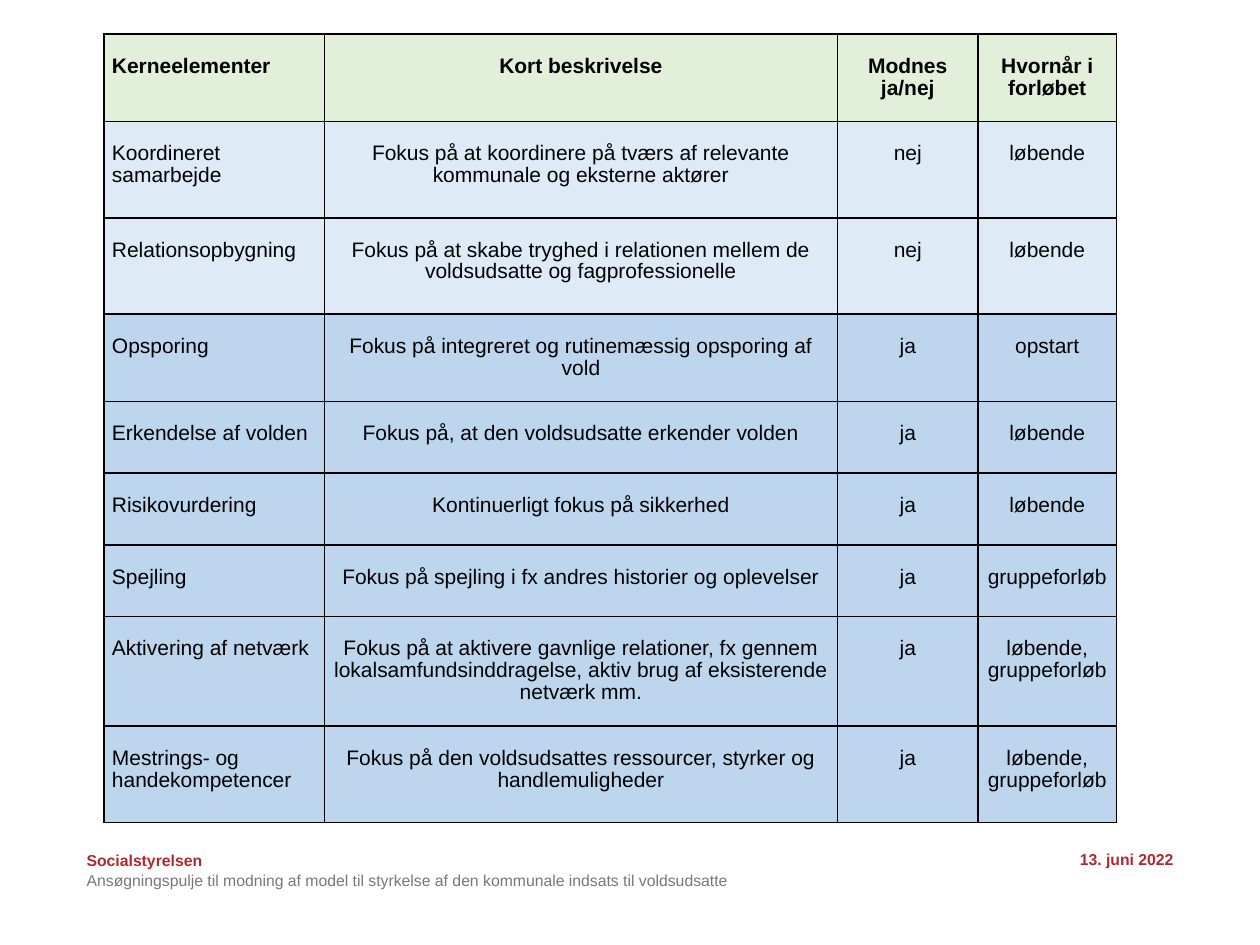
from lxml import etree
from pptx import Presentation
from pptx import util as u
from pptx.dml.color import RGBColor
from pptx.enum import text
from pptx.oxml import ns

COLORS = {"black": "000000", "red": "AF292E", "grey": "797777",
          "header": "E2EFD9", "nej": "DEEAF6", "ja": "BDD6EE"}
HEADER = ("Kerneelementer", "Kort beskrivelse", "Modnes ja/nej", "Hvornår i forløbet")
ELEMENTS = [
    ("Koordineret samarbejde",
     "Fokus på at koordinere på tværs af relevante kommunale og eksterne aktører",
     "nej", "løbende"),
    ("Relationsopbygning",
     "Fokus på at skabe tryghed i relationen mellem de voldsudsatte og fagprofessionelle",
     "nej", "løbende"),
    ("Opsporing", "Fokus på integreret og rutinemæssig opsporing af vold", "ja", "opstart"),
    ("Erkendelse af volden", "Fokus på, at den voldsudsatte erkender volden", "ja", "løbende"),
    ("Risikovurdering", "Kontinuerligt fokus på sikkerhed", "ja", "løbende"),
    ("Spejling", "Fokus på spejling i fx andres historier og oplevelser",
     "ja", "gruppeforløb"),
    ("Aktivering af netværk",
     "Fokus på at aktivere gavnlige relationer, fx gennem lokalsamfundsinddragelse, "
     "aktiv brug af eksisterende netværk mm.", "ja", "løbende, gruppeforløb"),
    ("Mestrings- og handekompetencer",
     "Fokus på den voldsudsattes ressourcer, styrker og handlemuligheder",
     "ja", "løbende, gruppeforløb"),
]
COLUMN_WIDTHS = (126, 293, 80.5, 79)
ROW_HEIGHTS = (50, 55, 55, 50, 41, 41, 41, 62.5, 55)
LINE_SPACING = u.Pt(12.5)


def apply(target, values):
    for name, value in values.items():
        setattr(target, name, value)


def write(frame, wording, color, align, size, bold=False):
    paragraph = frame.paragraphs[0]
    paragraph.alignment = align
    run = paragraph.add_run()
    run.text = wording
    apply(run.font, {"name": "Arial", "size": u.Pt(size), "bold": bold})
    run.font.color.rgb = RGBColor.from_string(COLORS[color])
    return paragraph


def add_borders(cell):
    properties = cell._tc.get_or_add_tcPr()
    for position, side in enumerate(("lnL", "lnR", "lnT", "lnB")):
        line = etree.Element(ns.qn(f"a:{side}"), w=str(u.Pt(1)))
        fill = etree.SubElement(line, ns.qn("a:solidFill"))
        etree.SubElement(fill, ns.qn("a:srgbClr"), val=COLORS["black"])
        properties.insert(position, line)  # borders come before the fill


def fill_cell(cell, wording, fill, align, bold):
    apply(cell, {"margin_left": u.Pt(4.5), "margin_right": u.Pt(4.5),
                 "margin_top": LINE_SPACING, "margin_bottom": 0})
    cell.fill.solid()
    cell.fill.fore_color.rgb = RGBColor.from_string(COLORS[fill])
    paragraph = write(cell.text_frame, wording, "black", align, 12, bold)
    paragraph.line_spacing = LINE_SPACING
    add_borders(cell)


def add_core_elements(slide, left, top):
    rows = [HEADER] + ELEMENTS
    table = slide.shapes.add_table(
        len(rows), len(HEADER), u.Pt(left), u.Pt(top),
        u.Pt(sum(COLUMN_WIDTHS)), u.Pt(sum(ROW_HEIGHTS))).table
    for column, width in zip(table.columns, COLUMN_WIDTHS):
        column.width = u.Pt(width)
    for r, (row, height) in enumerate(zip(rows, ROW_HEIGHTS)):
        table.rows[r].height = u.Pt(height)
        fill = "header" if r == 0 else row[2]  # body rows are coloured by ja/nej
        for c, wording in enumerate(row):
            align = text.PP_ALIGN.CENTER if c else text.PP_ALIGN.LEFT
            fill_cell(table.cell(r, c), wording, fill, align, r == 0)


def add_label(slide, box, wording, color, anchor, align=text.PP_ALIGN.LEFT, bold=False):
    frame = slide.shapes.add_textbox(*map(u.Pt, box)).text_frame
    apply(frame, {"word_wrap": True, "vertical_anchor": anchor, "margin_left": 0,
                  "margin_right": 0, "margin_top": 0, "margin_bottom": 0})
    write(frame, wording, color, align, 9, bold)


def main():
    deck = Presentation()
    apply(deck, {"slide_width": u.Pt(720), "slide_height": u.Pt(540)})
    slide = deck.slides.add_slide(deck.slide_layouts[6])

    # Table of core elements
    add_core_elements(slide, 59.5, 19.5)

    # Footer: sender, date and subject
    anchors = text.MSO_ANCHOR
    add_label(slide, (49.5, 486, 85, 11), "Socialstyrelsen", "red", anchors.TOP, bold=True)
    add_label(slide, (508.5, 476.5, 162, 29), "13. juni 2022", "red", anchors.MIDDLE,
              text.PP_ALIGN.RIGHT, bold=True)
    add_label(slide, (49.5, 494, 375, 14.5),
              "Ansøgningspulje til modning af model til styrkelse af den kommunale "
              "indsats til voldsudsatte", "grey", anchors.BOTTOM)

    deck.save("out.pptx")


if __name__ == "__main__":
    main()
